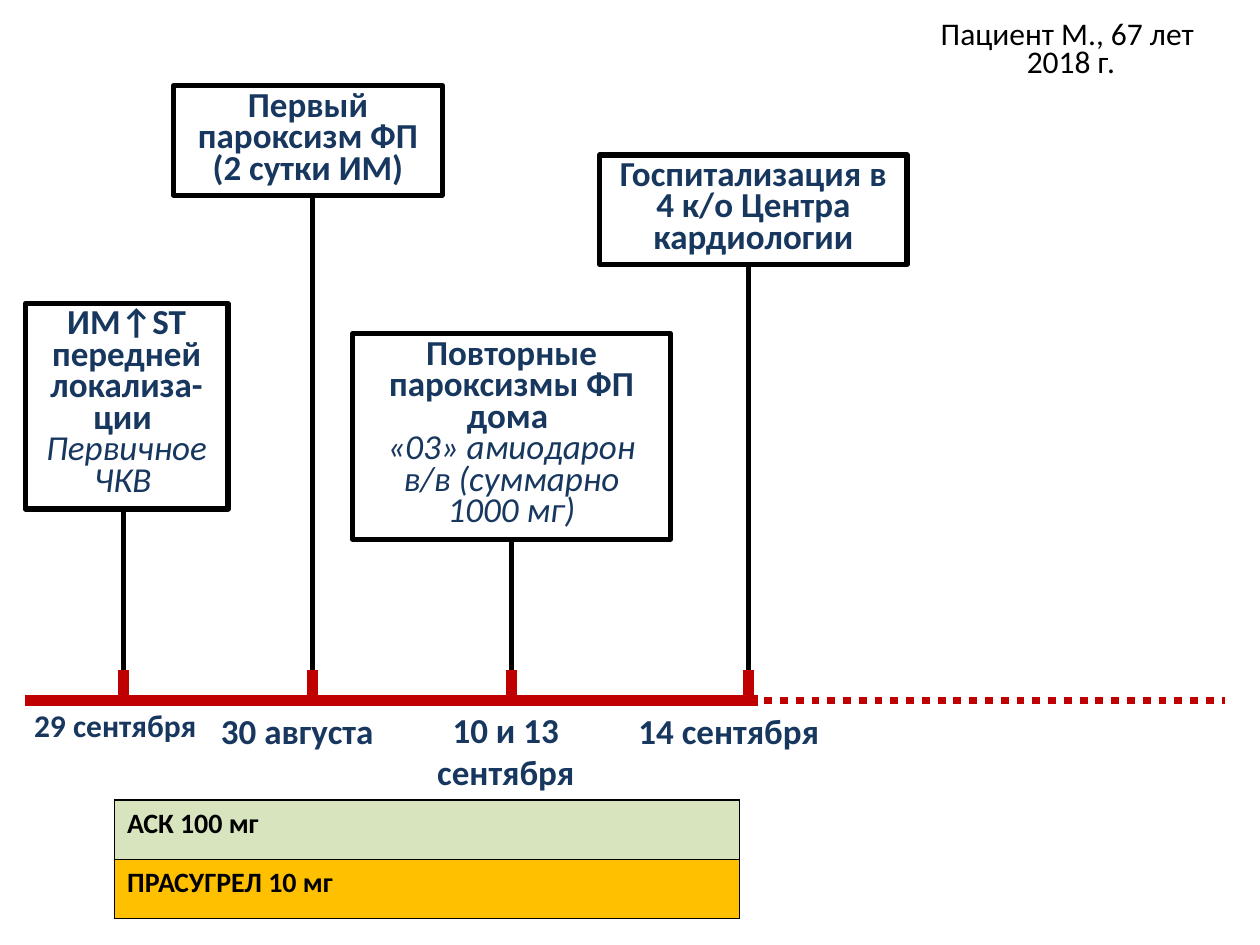
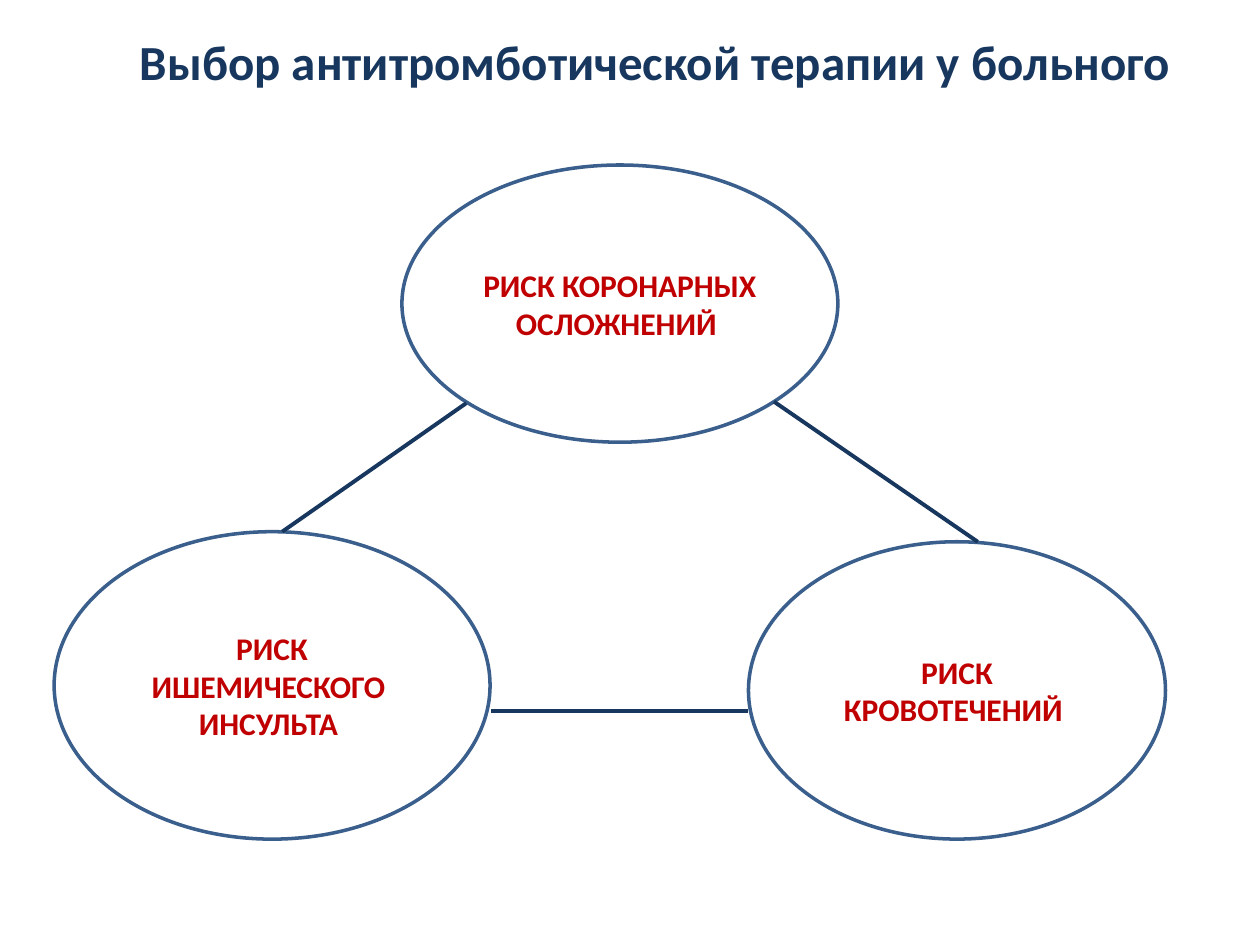
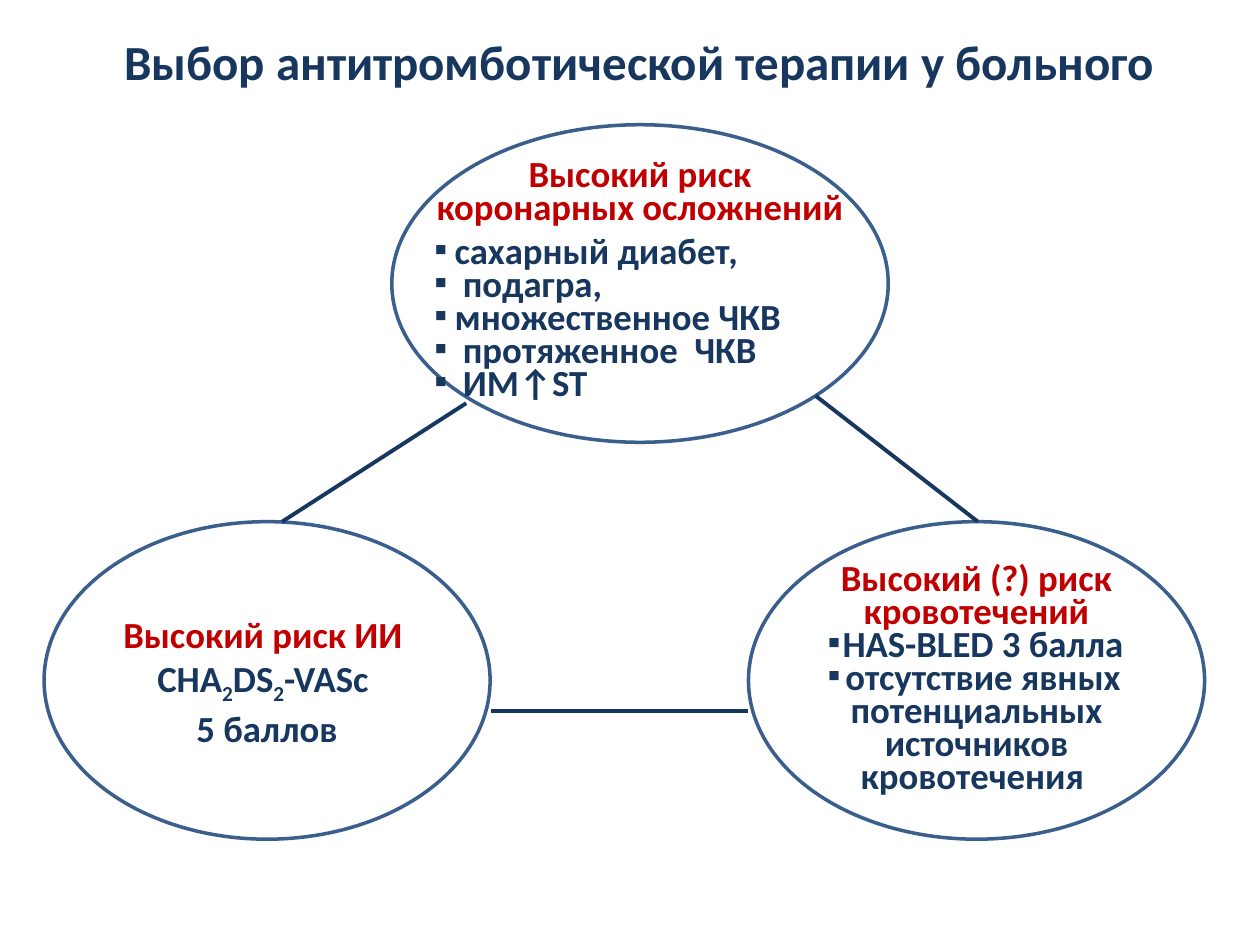
from math import sqrt

from lxml import etree
from pptx import Presentation
from pptx import util as u
from pptx.dml.color import RGBColor
from pptx.enum import dml, shapes, text
from pptx.oxml.ns import qn


class Theme:
    font = "Calibri"
    navy, red, black, edge = "17375E", "C00000", "000000", "3A5F8C"
    green, amber = "D7E4BD", "FFC000"
    title, date, small, risk, cell = 28, 20, 18, 21, 16
    thick, dotted, frame, link, oval = 6, 4.5, 3, 2.25, 2
    tight = 0.75


# The slide is a grid of 100 columns by 75 rows
COLS, ROWS = 100, 75
CELL = u.Inches(0.1)
CENTER, LEFT = text.PP_ALIGN.CENTER, text.PP_ALIGN.LEFT
TOP, MIDDLE = text.MSO_ANCHOR.TOP, text.MSO_ANCHOR.MIDDLE
GROW = text.MSO_AUTO_SIZE.SHAPE_TO_FIT_TEXT


def cells(*values):
    return [round(v * CELL) for v in values]


def apply(obj, **values):
    for name, value in values.items():
        setattr(obj, name, value)


# Text
def para(*runs, bullet=False, hang=0, **fmt):
    """One paragraph; a run is a string or a (string, format) pair."""
    return dict(runs=runs, bullet=bullet, hang=hang, fmt=fmt)


def add_bullet(p, hang):
    pPr = p._p.get_or_add_pPr()
    if hang:
        indent = cells(hang)[0]
        pPr.set("marL", str(indent))
        pPr.set("indent", str(-indent))
    etree.SubElement(pPr, qn("a:buFont")).set("typeface", "Arial")
    etree.SubElement(pPr, qn("a:buChar")).set("char", "▪")


def add_run(p, content, size, color=Theme.navy, bold=True, italic=False, base=0):
    r = p.add_run()
    r.text = content
    apply(r.font, name=Theme.font, size=u.Pt(size), bold=bold, italic=italic)
    r.font.color.rgb = RGBColor.from_string(color)
    if base:
        r._r.get_or_add_rPr().set("baseline", str(base * 1000))


def write(tf, paras, size, spacing=None, align=CENTER, **frame):
    apply(tf, word_wrap=True, **frame)
    for i, item in enumerate(paras):
        item = para(item) if isinstance(item, str) else item
        p = tf.add_paragraph() if i else tf.paragraphs[0]
        fmt = dict(item["fmt"])
        apply(p, alignment=fmt.pop("align", align),
              line_spacing=spacing, space_after=fmt.pop("after", None))
        if item["bullet"]:
            add_bullet(p, item["hang"])
        for run in item["runs"]:
            content, extra = (run, {}) if isinstance(run, str) else run
            add_run(p, content, size, **{**fmt, **extra})


# Elements
def add_label(slide, box, paras, size, **fmt):
    tb = slide.shapes.add_textbox(*cells(*box))
    write(tb.text_frame, paras, size, **fmt)


def add_outline(slide, kind, box, color, width, paras, size, **fmt):
    sp = slide.shapes.add_shape(kind, *cells(*box))
    sp.shadow.inherit = False
    sp.fill.background()
    sp.line.color.rgb = RGBColor.from_string(color)
    sp.line.width = u.Pt(width)
    write(sp.text_frame, paras, size, **fmt)


def add_line(slide, start, end, color, width, dash=None):
    ln = slide.shapes.add_connector(shapes.MSO_CONNECTOR.STRAIGHT, *cells(*start, *end))
    ln.line.color.rgb = RGBColor.from_string(color)
    apply(ln.line, width=u.Pt(width), dash_style=dash)
    etree.SubElement(ln._element.spPr, qn("a:effectLst"))


def add_border(cell, color, width):
    tcPr = cell._tc.get_or_add_tcPr()
    for i, side in enumerate(("lnL", "lnR", "lnT", "lnB")):
        ln = etree.Element(qn("a:" + side), w=str(u.Pt(width)))
        fill = etree.SubElement(ln, qn("a:solidFill"))
        etree.SubElement(fill, qn("a:srgbClr")).set("val", color)
        tcPr.insert(i, ln)


def add_drugs(slide, box, rows):
    table = slide.shapes.add_table(len(rows), 1, *cells(*box)).table
    apply(table, first_row=False, horz_banding=False)
    for i, (name, color) in enumerate(rows):
        cell = table.cell(i, 0)
        cell.fill.solid()
        cell.fill.fore_color.rgb = RGBColor.from_string(color)
        add_border(cell, Theme.black, 1)
        write(cell.text_frame, [para(name, color=Theme.black)], Theme.cell, align=LEFT)


def add_title(slide, box):
    sp = slide.shapes.title
    apply(sp, **dict(zip(("left", "top", "width", "height"), cells(*box))))
    write(sp.text_frame, ["Выбор антитромботической терапии у больного "], Theme.title,
          vertical_anchor=MIDDLE, auto_size=text.MSO_AUTO_SIZE.NONE,
          margin_top=0, margin_bottom=u.Inches(0.47))


# Slides
def timeline_slide(prs, events, drugs):
    slide = prs.slides.add_slide(prs.slide_layouts[6])
    axis, tick_top, now = 55.6, 53.2, 59.4
    add_line(slide, (2, axis), (60.2, axis), Theme.red, Theme.thick)
    for x, box, paras, date, date_box, date_size in events:
        add_label(slide, date_box, [date], date_size, vertical_anchor=MIDDLE)
        add_outline(slide, shapes.MSO_SHAPE.RECTANGLE, box, Theme.black, Theme.frame, paras,
                    Theme.date, spacing=Theme.tight, vertical_anchor=TOP, auto_size=GROW)
        add_line(slide, (x, box[1] + box[3]), (x, tick_top), Theme.black, Theme.frame)
        add_line(slide, (x, tick_top), (x, axis), Theme.red, Theme.thick)
    add_drugs(slide, (9.1, 63.5, 49.6, 9.4), drugs)
    add_line(slide, (now, axis), (97.2, axis), Theme.red, Theme.dotted,
             dml.MSO_LINE.ROUND_DOT)
    plain = dict(color=Theme.black, bold=False)
    add_label(slide, (72.8, 1.3, 24.4, 5.6),
              [para("Пациент М., 67 лет ", **plain), para("2018 г.", **plain)],
              Theme.small, spacing=Theme.tight, auto_size=GROW)


def triangle_slide(prs, title_box, ovals, size):
    """Ovals come as left, right, top: (box, paragraphs, line spacing)."""
    slide = prs.slides.add_slide(prs.slide_layouts[5])
    add_title(slide, title_box)
    for box, paras, spacing in ovals:
        add_outline(slide, shapes.MSO_SHAPE.OVAL, box, Theme.edge, Theme.oval, paras, size,
                    spacing=spacing, vertical_anchor=MIDDLE)
    left, right, top = (oval[0] for oval in ovals)
    x, y, w, h = top
    diagonal = (1 + 1 / sqrt(2)) / 2
    links = [((37, 32), (22.4, left[1])),
             ((39, 56.4), (right[0], 56.4)),
             ((x + w * diagonal, y + h * diagonal), (77.6, right[1]))]
    for start, end in links:
        add_line(slide, start, end, Theme.navy, Theme.link)
    return slide


def main():
    prs = Presentation()
    apply(prs, slide_width=COLS * CELL, slide_height=ROWS * CELL)

    # Course of the illness
    note = dict(bold=False, italic=True)
    timeline_slide(prs, [
        (9.8, (2, 24.1, 16.1, 16.3),
         ["ИМ↑ST передней локализа-ции ", para("Первичное", **note), para("ЧКВ ", **note)],
         "29 сентября", (0.1, 56, 18.1, 3.1), Theme.small),
        (24.8, (13.8, 6.8, 21.3, 8.7), ["Первый пароксизм ФП (2 сутки ИМ)"],
         "30 августа", (16.1, 56.4, 15, 3.1), Theme.date),
        (40.6, (28, 26.5, 25.2, 16.3),
         ["Повторные пароксизмы ФП дома ",
          para("«03» амиодарон в/в (суммарно 1000 мг)", **note)],
         "10 и 13 сентября", (29.5, 58, 21.3, 3.1), Theme.date),
        (59.4, (47.6, 12.3, 24.4, 8.7), ["Госпитализация в 4 к/о Центра кардиологии"],
         "14 сентября", (49.2, 55.6, 17.3, 4.7), Theme.date),
    ], [("АСК 100 мг", Theme.green), ("ПРАСУГРЕЛ 10 мг", Theme.amber)])

    # Three risks to weigh
    def red(content, **fmt):
        return para(content, color=Theme.red, **fmt)

    triangle_slide(prs, (9.1, 2.8, 86.6, 8.7), [
        ((4.3, 42.2, 34.6, 24.4), [red("РИСК"), red("ИШЕМИЧЕСКОГО "), red("ИНСУЛЬТА ")], None),
        ((59.4, 43, 33.1, 23.6), [red("РИСК КРОВОТЕЧЕНИЙ ")], None),
        ((31.9, 13.1, 34.6, 22), [red("РИСК КОРОНАРНЫХ ОСЛОЖНЕНИЙ ")], None),
    ], Theme.small)

    # The risks of this patient
    sub = dict(base=-25)
    slide = triangle_slide(prs, (5.1, 2.8, 92.1, 8.7), [
        ((3.5, 41.4, 35.4, 25.2),
         [red("Высокий риск ИИ "),
          para("CHA", ("2", sub), "DS", ("2", sub), "-VASc "), "5 баллов"], None),
        ((59.4, 41.4, 36.2, 25.2),
         [red("Высокий (?) риск кровотечений"), para("HAS-BLED 3 балла", bullet=True),
          para("отсутствие явных потенциальных источников кровотечения ", bullet=True)],
         Theme.tight),
        ((31.1, 9.9, 39.4, 25.2), [], None),
    ], Theme.risk)
    factors = ["сахарный диабет,", " подагра,", "множественное ЧКВ", " протяженное  ЧКВ", " ИМ↑ST"]
    add_label(slide, (33.5, 12.3, 34.6, 20.4),
              [red("Высокий риск коронарных осложнений ", after=u.Pt(6))]
              + [para(f, bullet=True, hang=1.6, align=LEFT) for f in factors],
              Theme.risk, spacing=Theme.tight, auto_size=GROW)

    prs.save("out.pptx")


if __name__ == "__main__":
    main()
